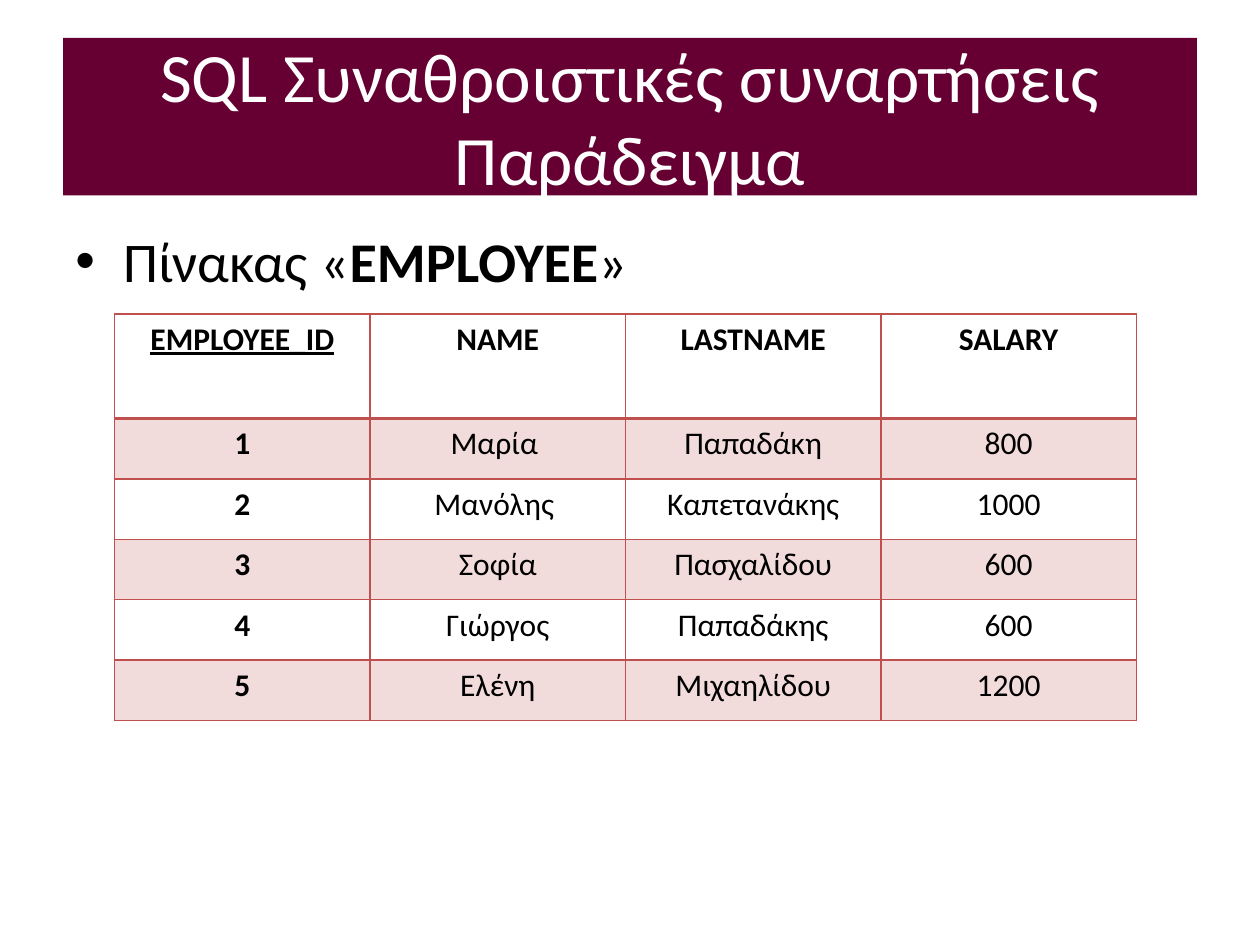
from dataclasses import dataclass

import pptx
import pptx.dml.color
import pptx.enum.text
import pptx.oxml
import pptx.oxml.ns
import pptx.util
from pptx.dml.color import RGBColor
from pptx.util import Inches

MAROON = RGBColor(0x66, 0x00, 0x33)
WHITE = RGBColor(0xFF, 0xFF, 0xFF)
BLACK = RGBColor(0x00, 0x00, 0x00)
RED = RGBColor(0xC0, 0x50, 0x4D)
FONT = "Calibri"
CENTER = pptx.enum.text.PP_ALIGN.CENTER


@dataclass
class Employee:
    id: int
    name: str
    lastname: str
    salary: int


HEADERS = ("EMPLOYEE_ID", "NAME", "LASTNAME", "SALARY")
EMPLOYEES = [
    Employee(1, "Μαρία ", "Παπαδάκη", 800),
    Employee(2, "Μανόλης ", "Καπετανάκης", 1000),
    Employee(3, "Σοφία", "Πασχαλίδου", 600),
    Employee(4, "Γιώργος", "Παπαδάκης", 600),
    Employee(5, "Ελένη", "Μιχαηλίδου", 1200),
]


def add_run(p, text: str, *, size: float, color: RGBColor = BLACK,
            bold: bool = False, underline: bool = False) -> None:
    r = p.add_run()
    r.text = text
    r.font.name = FONT
    r.font.size = pptx.util.Pt(size)
    r.font.color.rgb = color
    r.font.bold = bold
    r.font.underline = underline


def add_xml(parent, tag: str, **attrs: str):
    child = pptx.oxml.parse_xml(f"<a:{tag} {pptx.oxml.ns.nsdecls('a')}/>")
    for key, value in attrs.items():
        child.set(key, value)
    parent.append(child)
    return child


def set_borders(cell, top: float = 1, bottom: float = 1) -> None:
    tcPr = cell._tc.get_or_add_tcPr()
    for side, width in (("L", 1), ("R", 1), ("T", top), ("B", bottom)):
        ln = add_xml(tcPr, f"ln{side}", w=str(pptx.util.Pt(width)))
        add_xml(add_xml(ln, "solidFill"), "srgbClr", val=str(RED))


def set_fill(cell, shaded: bool) -> None:
    if not shaded:
        cell.fill.background()
        return
    cell.fill.solid()
    cell.fill.fore_color.rgb = RED
    color = cell._tc.tcPr.find(".//" + pptx.oxml.ns.qn("a:solidFill")
                               + "[last()]/" + pptx.oxml.ns.qn("a:srgbClr"))
    fill = cell._tc.tcPr.find(pptx.oxml.ns.qn("a:solidFill"))
    color = fill.find(pptx.oxml.ns.qn("a:srgbClr"))
    add_xml(color, "alpha", val="20000")


def add_title(s) -> None:
    sp = s.shapes.title
    sp.left, sp.top = Inches(0.5), Inches(0.3)
    sp.width, sp.height = Inches(9), Inches(1.25)
    sp.fill.solid()
    sp.fill.fore_color.rgb = MAROON
    tf = sp.text_frame
    tf.auto_size = pptx.enum.text.MSO_AUTO_SIZE.NONE
    tf.vertical_anchor = pptx.enum.text.MSO_ANCHOR.MIDDLE
    p = tf.paragraphs[0]
    p.alignment = CENTER
    add_run(p, "SQL Συναθροιστικές συναρτήσεις", size=39.6, color=WHITE)
    p.add_line_break()
    add_run(p, "Παράδειγμα", size=39.6, color=WHITE)


def add_bullet(s) -> None:
    sp = s.shapes.add_textbox(Inches(0.5), Inches(1.75), Inches(9), Inches(4.95))
    tf = sp.text_frame
    tf.word_wrap = True
    p = tf.paragraphs[0]
    p.space_before = pptx.util.Pt(6.4)
    pPr = p._p.get_or_add_pPr()
    pPr.set("marL", str(Inches(0.38)))
    pPr.set("indent", str(Inches(-0.38)))
    add_xml(pPr, "buFont", typeface="Arial")
    add_xml(pPr, "buChar", char="•")
    add_run(p, "Πίνακας «", size=32)
    add_run(p, "EMPLOYEE", size=32, bold=True)
    add_run(p, "»", size=32)


def add_employee_table(s) -> None:
    rows = [HEADERS] + [(e.id, e.name, e.lastname, e.salary) for e in EMPLOYEES]
    table = s.shapes.add_table(len(rows), len(HEADERS), Inches(0.91), Inches(2.49),
                               Inches(8.11), Inches(3.25)).table
    for column in table.columns:
        column.width = Inches(8.11 / len(HEADERS))
    for i, values in enumerate(rows):
        table.rows[i].height = Inches(0.83 if i == 0 else 0.48)
        for j, value in enumerate(values):
            cell = table.cell(i, j)
            # The rule under the header is thicker than the others
            set_borders(cell, top=2 if i == 1 else 1, bottom=2 if i == 0 else 1)
            set_fill(cell, shaded=i % 2 == 1)
            p = cell.text_frame.paragraphs[0]
            p.alignment = CENTER
            add_run(p, str(value), size=18, bold=i == 0 or j == 0,
                    underline=i == 0 and j == 0)


def main() -> None:
    prs = pptx.Presentation()
    prs.slide_width, prs.slide_height = Inches(10), Inches(7.5)
    s = prs.slides.add_slide(prs.slide_layouts[5])  # title only
    add_title(s)
    add_bullet(s)
    add_employee_table(s)
    prs.save("out.pptx")


if __name__ == "__main__":
    main()
